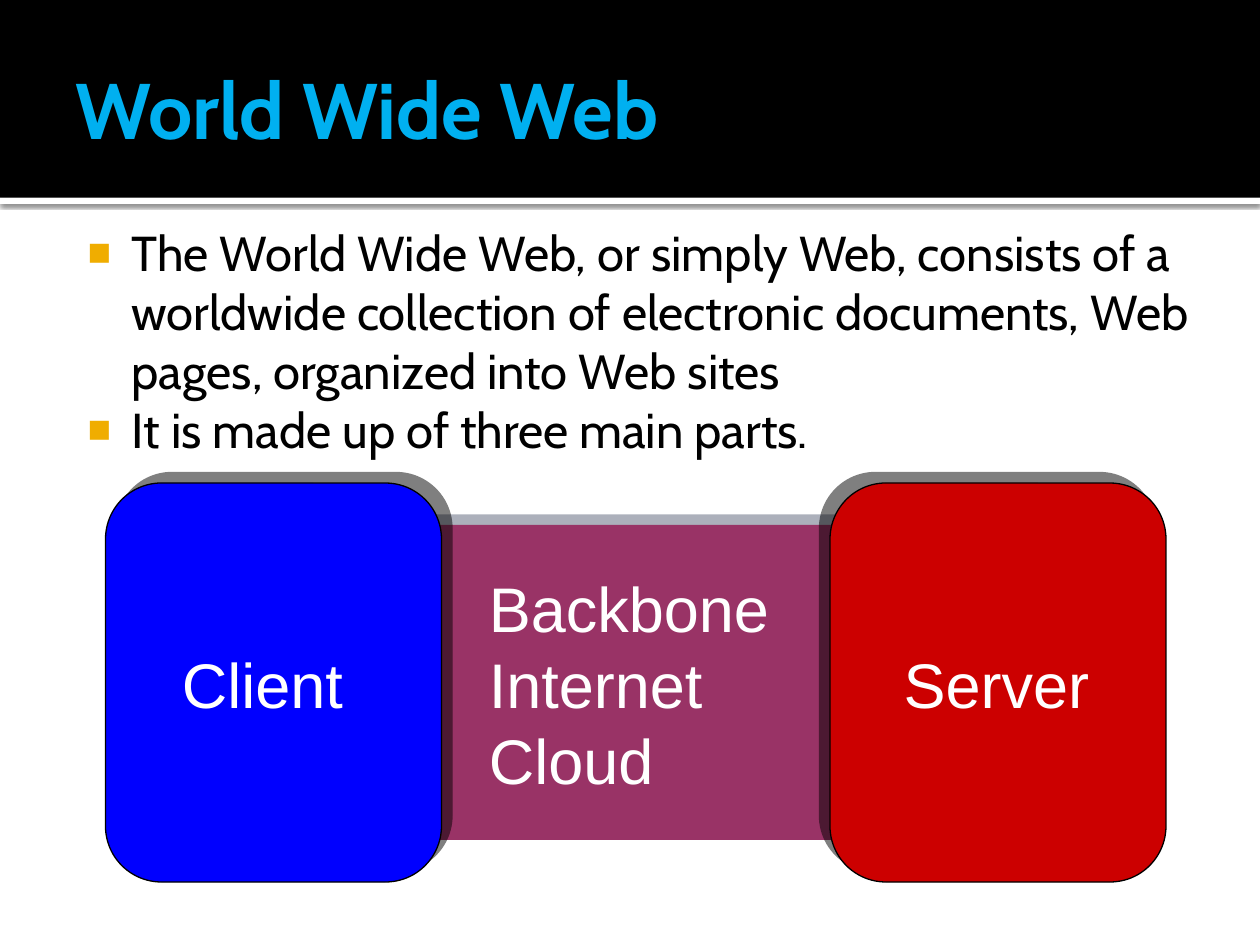
from lxml import etree
from pptx import Presentation
from pptx.dml.color import RGBColor
from pptx.enum.shapes import MSO_SHAPE
from pptx.enum.text import MSO_ANCHOR, MSO_AUTO_SIZE
from pptx.oxml.ns import qn
from pptx.util import Pt

BLACK = RGBColor(0x00, 0x00, 0x00)
WHITE = RGBColor(0xFF, 0xFF, 0xFF)
SKY = RGBColor(0x00, 0xB0, 0xF0)
AMBER = RGBColor(0xF0, 0xAD, 0x00)
BLUE = RGBColor(0x00, 0x00, 0xFF)
RED = RGBColor(0xCC, 0x00, 0x00)
PLUM = RGBColor(0x99, 0x33, 0x66)
SLATE = RGBColor(0x5A, 0x63, 0x78)


def add_shadow(sp, color, alpha, blur, dist, angle):
    effects = sp._element.spPr.find(qn("a:effectLst"))
    shadow = etree.SubElement(
        effects, qn("a:outerShdw"), blurRad=str(Pt(blur)), dist=str(Pt(dist)),
        dir=str(angle * 60000), algn="ctr", rotWithShape="0")
    clr = etree.SubElement(shadow, qn("a:srgbClr"), val=str(color))
    etree.SubElement(clr, qn("a:alpha"), val=str(alpha * 1000))


def add_box(shapes, box, fill, kind=MSO_SHAPE.RECTANGLE, line=None):
    sp = shapes.add_shape(kind, *map(Pt, box))
    sp.shadow.inherit = False
    sp.fill.solid()
    sp.fill.fore_color.rgb = fill
    if line is None:
        sp.line.fill.background()
    else:
        sp.line.color.rgb = line
        sp.line.width = Pt(0.75)
    return sp


def add_text(shapes, box, lines, size, color, font="Cabin", bold=False, wrap=True,
             anchor=MSO_ANCHOR.TOP, insets=(7.2, 3.6, 7.2, 3.6), spacing=None,
             bullet=None):
    tf = shapes.add_textbox(*map(Pt, box)).text_frame
    tf.word_wrap = wrap
    if not wrap:
        tf.auto_size = MSO_AUTO_SIZE.SHAPE_TO_FIT_TEXT
    tf.vertical_anchor = anchor
    tf.margin_left, tf.margin_top, tf.margin_right, tf.margin_bottom = map(Pt, insets)
    for i, text in enumerate(lines):
        p = tf.add_paragraph() if i else tf.paragraphs[0]
        if spacing:
            p.line_spacing = Pt(spacing)
        if bullet:
            add_bullet(p, bullet)
        r = p.add_run()
        r.text = text
        r.font.name, r.font.size, r.font.bold = font, Pt(size), bold
        r.font.color.rgb = color


def add_bullet(p, color):
    pPr = p._p.get_or_add_pPr()
    pPr.set("marL", str(Pt(34.9)))
    pPr.set("indent", str(Pt(-25.2)))
    clr = etree.SubElement(pPr, qn("a:buClr"))
    etree.SubElement(clr, qn("a:srgbClr"), val=str(color))
    etree.SubElement(pPr, qn("a:buSzPct"), val="80000")
    etree.SubElement(pPr, qn("a:buFont"), typeface="Arial")
    etree.SubElement(pPr, qn("a:buChar"), char="■")


def add_header(s, box, title):
    x, y, w, h = box
    # White rule with a soft shadow, under the black band
    rule = add_box(s.shapes, (x, y + h, w, 3.6), WHITE)
    add_shadow(rule, BLACK, 60, 2.5, 0.8, 90)
    add_box(s.shapes, box, BLACK)
    add_text(s.shapes, (x + 36, y + 12.2, w - 72, 98.6), [title], 45, SKY, bold=True,
             anchor=MSO_ANCHOR.MIDDLE, insets=(7.2, 3.6, 3.6, 3.6))


def add_body(s, box, items):
    add_text(s.shapes, box, items, 28, BLACK, insets=(4.3, 7.2, 7.2, 3.6), bullet=AMBER)


def add_part(s, box, label_box, lines, fill, shadow_color, angle, rounded=True):
    shapes = s.shapes.add_group_shape().shapes
    if rounded:
        sp = add_box(shapes, box, fill, MSO_SHAPE.ROUNDED_RECTANGLE, BLACK)
    else:
        sp = add_box(shapes, box, fill)
    add_shadow(sp, shadow_color, 50, 0, 8.5, angle)
    add_text(shapes, label_box, lines, 36, WHITE, font="Arial", wrap=False, spacing=43.4)


def add_diagram(s, box):
    x, y, w, h = box
    side = 192
    label_y = y + 89
    # Backbone lies behind the two end parts
    add_part(s, (x + 180, y + 24, 240, 180), (x + 212, y + 45.5, 176, 137.4),
             ["Backbone", "Internet", "Cloud"], PLUM, SLATE, 315, rounded=False)
    add_part(s, (x, y, side, h), (x + 36.5, label_y, 107, 50.6),
             ["Client"], BLUE, BLACK, 315)
    add_part(s, (x + w - side, y, side, h), (x + w - side + 35, label_y, 121, 50.6),
             ["Server"], RED, BLACK, 225)


def main():
    prs = Presentation()
    prs.slide_width, prs.slide_height = Pt(720), Pt(540)
    s = prs.slides.add_slide(prs.slide_layouts[6])
    add_header(s, (0, 0, 720, 113), "World Wide Web")
    add_body(s, (36, 120.2, 666, 149.8), [
        "The World Wide Web, or simply Web, consists of a worldwide collection of "
        "electronic documents, Web pages, organized into Web sites",
        "It is made up of three main parts.",
    ])
    add_diagram(s, (60.3, 276, 606, 228))
    prs.save("out.pptx")


if __name__ == "__main__":
    main()
